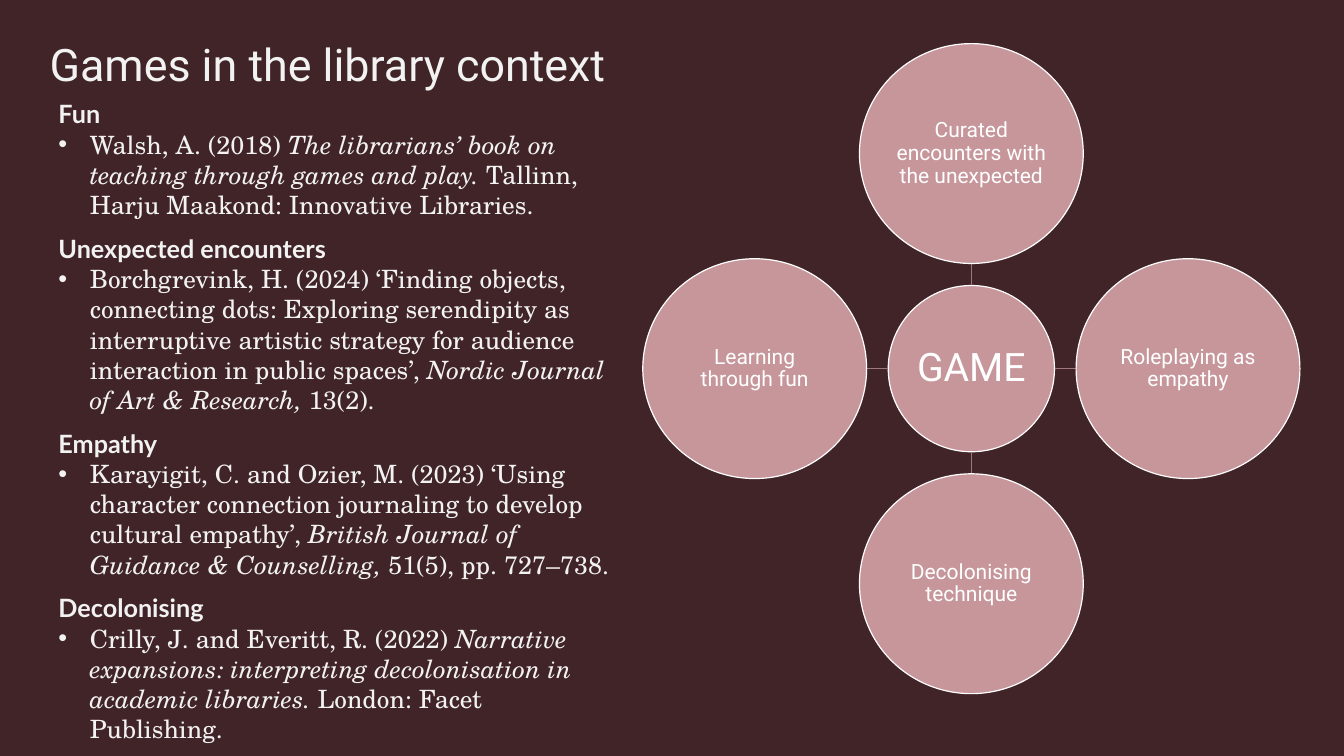
from lxml import etree
from pptx import Presentation, util as u
from pptx.dml.color import RGBColor
from pptx.enum import shapes, text
from pptx.oxml import ns

WHITE, PALE, ROSE, WIRE, WINE = "FFFFFF", "F2F2F2", "C6969B", "9F787C", "412427"
TITLE = dict(name="Roboto", size=u.Pt(32), bold=False)
HEADING = dict(name="Lato", size=u.Pt(18), bold=True)
REFERENCE = dict(name="TeX Gyre Schola", size=u.Pt(18), bold=False)

# Heading, then the reference as plain, italic, plain
READINGS = [
    ("Fun", "Walsh, A. (2018) ",
     "The librarians’ book on teaching through games and play. ",
     "Tallinn, Harju Maakond: Innovative Libraries."),
    ("Unexpected encounters",
     "Borchgrevink, H. (2024) ‘Finding objects, connecting dots: Exploring "
     "serendipity as interruptive artistic strategy for audience interaction "
     "in public spaces’, ",
     "Nordic Journal of Art & Research, ", "13(2)."),
    ("Empathy",
     "Karayigit, C. and Ozier, M. (2023) ‘Using character connection "
     "journaling to develop cultural empathy’, ",
     "British Journal of Guidance & Counselling, ", "51(5), pp. 727–738."),
    ("Decolonising", "Crilly, J. and Everitt, R. (2022) ",
     "Narrative expansions: interpreting decolonisation in academic libraries. ",
     "London: Facet Publishing."),
]

# Label and direction from the hub
SPOKES = [
    ("Curated encounters with the unexpected", 0, -1),
    ("Roleplaying as empathy", 1, 0),
    ("Decolonising technique", 0, 1),
    ("Learning through fun", -1, 0),
]
HUB_X, HUB_Y, HUB_SIZE = 24.48, 9.29, 4.19
SPOKE_W, SPOKE_H, REACH_X, REACH_Y = 5.64, 5.54, 5.46, 5.42


def rgb(value):
    return RGBColor.from_string(value)


def apply(target, values):
    for name, value in values.items():
        setattr(target, name, value)


class Deck:
    def __init__(self, prs):
        self.s = prs.slides.add_slide(prs.slide_layouts[1])
        fill = self.s.background.fill
        fill.solid()
        fill.fore_color.rgb = rgb(WINE)

    def run(self, p, words, style, color=PALE, italic=False):
        r = p.add_run()
        r.text = words
        apply(r.font, dict(style, italic=italic))
        r.font.color.rgb = rgb(color)

    def place(self, sp, left, top, width, height):
        apply(sp, dict(left=u.Cm(left), top=u.Cm(top),
                       width=u.Cm(width), height=u.Cm(height)))

    def frame(self, sp, anchor, **margins):
        tf = sp.text_frame
        apply(tf, dict(word_wrap=True, auto_size=text.MSO_AUTO_SIZE.NONE,
                       vertical_anchor=anchor))
        apply(tf, {f"margin_{side}": u.Cm(gap) for side, gap in margins.items()})
        return tf

    def title(self, words):
        sp = self.s.shapes.title
        self.place(sp, 1.25, 1.09, 31.4, 3.18)
        tf = self.frame(sp, text.MSO_ANCHOR.TOP, left=0, top=0, right=0, bottom=0)
        p = tf.paragraphs[0]
        apply(p, dict(alignment=text.PP_ALIGN.LEFT, line_spacing=0.9))
        self.run(p, words, TITLE)

    def readings(self, entries):
        sp = self.s.placeholders[1]
        self.place(sp, 1.22, 2.36, 14.5, 16.66)
        tf = self.frame(sp, text.MSO_ANCHOR.TOP)
        for i, (heading, before, work, after) in enumerate(entries):
            p = tf.add_paragraph() if i else tf.paragraphs[0]
            self.paragraph(p, 0, 9.6 if i else 0)
            self.run(p, heading, HEADING)
            p = tf.add_paragraph()
            self.paragraph(p, 0.79, 0)
            for words, italic in ((before, False), (work, True), (after, False)):
                self.run(p, words, REFERENCE, italic=italic)

    def paragraph(self, p, indent, space):
        pPr = p._p.get_or_add_pPr()
        pPr.set("marL", str(u.Cm(indent)))
        pPr.set("indent", str(-u.Cm(indent)))
        if indent:
            etree.SubElement(pPr, ns.qn("a:buChar")).set("char", "•")
        else:
            etree.SubElement(pPr, ns.qn("a:buNone"))
        apply(p, dict(space_before=u.Pt(space), space_after=u.Pt(0), line_spacing=1.0))

    def circle(self, words, x, y, width, height, size):
        sp = self.s.shapes.add_shape(shapes.MSO_SHAPE.OVAL, 0, 0, 0, 0)
        self.place(sp, x - width / 2, y - height / 2, width, height)
        sp.shadow.inherit = False
        sp.fill.solid()
        sp.fill.fore_color.rgb = rgb(ROSE)
        sp.line.color.rgb = rgb(WHITE)
        sp.line.width = u.Pt(0.85)
        tf = self.frame(sp, text.MSO_ANCHOR.MIDDLE,
                        left=0.03, top=0.03, right=0.03, bottom=0.03)
        p = tf.paragraphs[0]
        apply(p, dict(alignment=text.PP_ALIGN.CENTER, line_spacing=0.9))
        self.run(p, words, dict(name="Roboto", size=u.Pt(size), bold=False), WHITE)

    def line(self, *ends):
        c = self.s.shapes.add_connector(shapes.MSO_CONNECTOR.STRAIGHT,
                                        *(u.Cm(v) for v in ends))
        c.line.color.rgb = rgb(WIRE)
        c.line.width = u.Pt(0.85)
        etree.SubElement(c._element.spPr, ns.qn("a:effectLst"))


def main():
    prs = Presentation()
    prs.slide_width, prs.slide_height = u.Cm(33.87), u.Cm(19.05)
    deck = Deck(prs)

    # Title and reading list
    deck.title("Games in the library context")
    deck.readings(READINGS)

    # Hub with four spokes
    deck.circle("GAME", HUB_X, HUB_Y, HUB_SIZE, HUB_SIZE, 28)
    for label, dx, dy in SPOKES:
        x, y = HUB_X + dx * REACH_X, HUB_Y + dy * REACH_Y
        deck.line(HUB_X + dx * HUB_SIZE / 2, HUB_Y + dy * HUB_SIZE / 2,
                  x - dx * SPOKE_W / 2, y - dy * SPOKE_H / 2)
        deck.circle(label, x, y, SPOKE_W, SPOKE_H, 15)

    prs.save("out.pptx")


if __name__ == "__main__":
    main()
